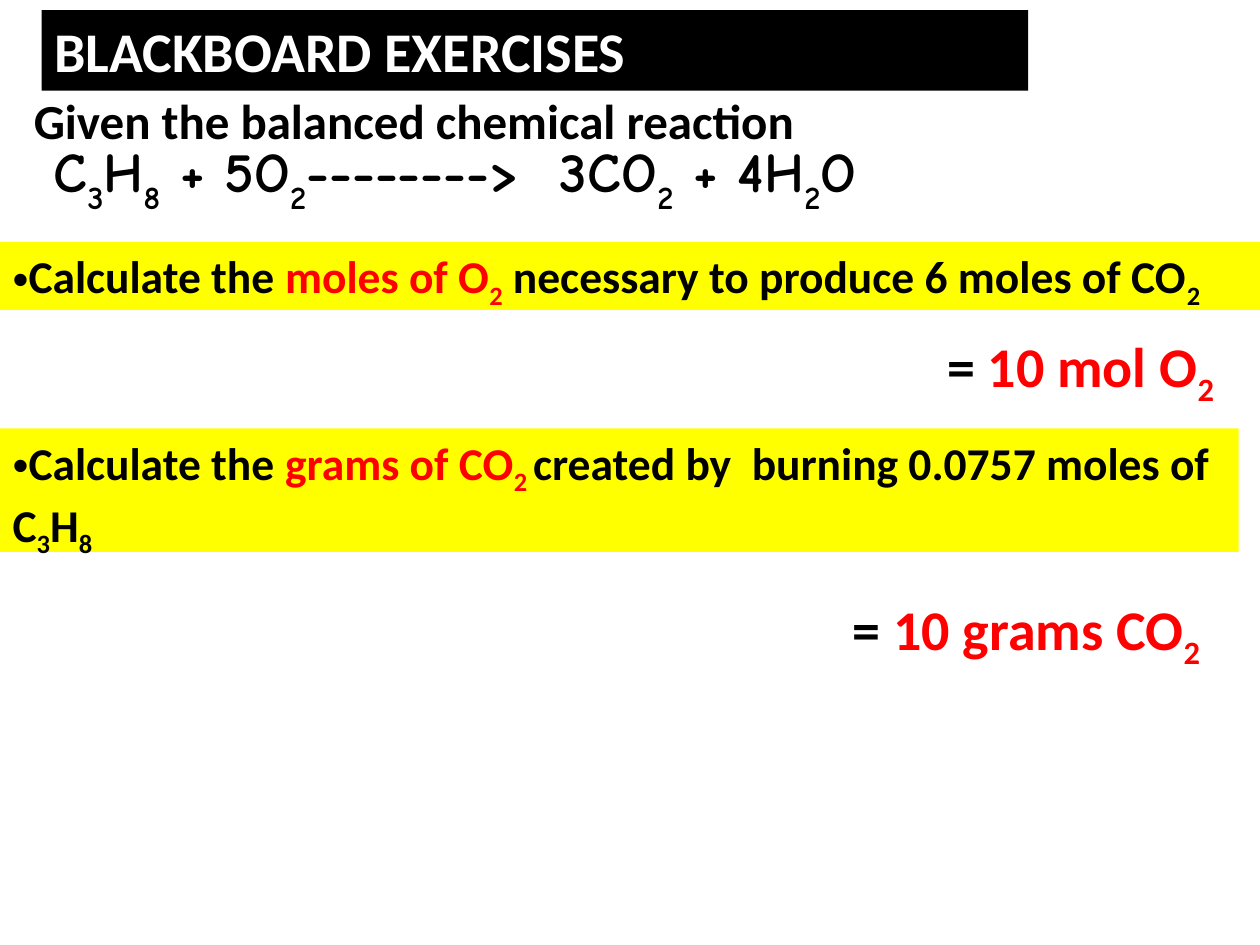
from pptx import Presentation
from pptx.dml.color import RGBColor
from pptx.enum import text
from pptx.util import Inches, Pt

BLACK = RGBColor(0, 0, 0)
WHITE = RGBColor(255, 255, 255)
RED = RGBColor(255, 0, 0)
YELLOW = RGBColor(255, 255, 0)


def place(shape, left, top, width, height, fill=None):
    shape.left, shape.top = Inches(left), Inches(top)
    shape.width, shape.height = Inches(width), Inches(height)
    if fill is not None:
        shape.fill.solid()
        shape.fill.fore_color.rgb = fill


def write(shape, runs, size, font="Calibri", subscript="-25000",
          anchor=text.MSO_ANCHOR.TOP):
    """Fill a shape with (text, colour) runs; "_" switches subscript on and off."""
    frame = shape.text_frame
    # Bands keep their set height; plain text boxes fit their text
    fit = (text.MSO_AUTO_SIZE.NONE if shape.is_placeholder
           else text.MSO_AUTO_SIZE.SHAPE_TO_FIT_TEXT)
    frame_format = {"word_wrap": True, "vertical_anchor": anchor,
                    "auto_size": fit}
    for name, value in frame_format.items():
        setattr(frame, name, value)
    paragraph = frame.paragraphs[0]
    paragraph.alignment = text.PP_ALIGN.LEFT
    paragraph.space_before = Pt(0)
    for words, colour in runs:
        for index, part in enumerate(words.split("_")):
            if not part:
                continue
            run = paragraph.add_run()
            run.text = part
            run_format = {"name": font, "size": Pt(size), "bold": True}
            for name, value in run_format.items():
                setattr(run.font, name, value)
            run.font.color.rgb = colour
            if index % 2:
                run.font._element.set("baseline", subscript)


presentation = Presentation()
presentation.slide_width = Inches(10)
presentation.slide_height = Inches(7.5)
# Title with two lists
slide = presentation.slides.add_slide(presentation.slide_layouts[3])

# Title band
title = slide.shapes.title
place(title, 0.33, 0.08, 7.83, 0.64, BLACK)
write(title, [("BLACKBOARD EXERCISES", WHITE)], 32)

# Reaction
equation = slide.shapes.add_textbox(0, 0, 0, 0)
place(equation, 0.33, 1.08, 9.17, 0.64)
write(equation, [("C_3_H_8_ + 5O_2_-------->  3CO_2_ + 4H_2_O", BLACK)], 32,
      "Comic Neue", "-30000", text.MSO_ANCHOR.MIDDLE)
intro = slide.shapes.add_textbox(0, 0, 0, 0)
place(intro, 0.17, 0.67, 8, 0.57)
write(intro, [("Given the balanced chemical reaction", BLACK)], 28)

# Questions on yellow bands
questions = [
    (1, (0, 1.92, 10, 0.54),
     [("Calculate the ", BLACK), ("moles of O_2_ ", RED),
      ("necessary to produce 6 moles of CO_2_", BLACK)]),
    (2, (0, 3.4, 9.83, 0.98),
     [("Calculate the ", BLACK), ("grams of CO_2 _", RED),
      ("created by  burning 0.0757 moles of C_3_H_8_", BLACK)]),
]
for placeholder, box, runs in questions:
    question = slide.placeholders[placeholder]
    place(question, *box, YELLOW)
    write(question, runs, 26)
    properties = question.text_frame.paragraphs[0]._p.get_or_add_pPr()
    for name in ("marL", "indent"):
        properties.set(name, "0")

# Answers
answers = [
    ((7.42, 2.58, 2.58, 0.64), "10 mol O_2_"),
    ((6.67, 4.67, 3.17, 0.64), "10 grams CO_2_"),
]
for box, result in answers:
    answer = slide.shapes.add_textbox(0, 0, 0, 0)
    place(answer, *box)
    write(answer, [("= ", BLACK), (result, RED)], 32)

presentation.save("out.pptx")
